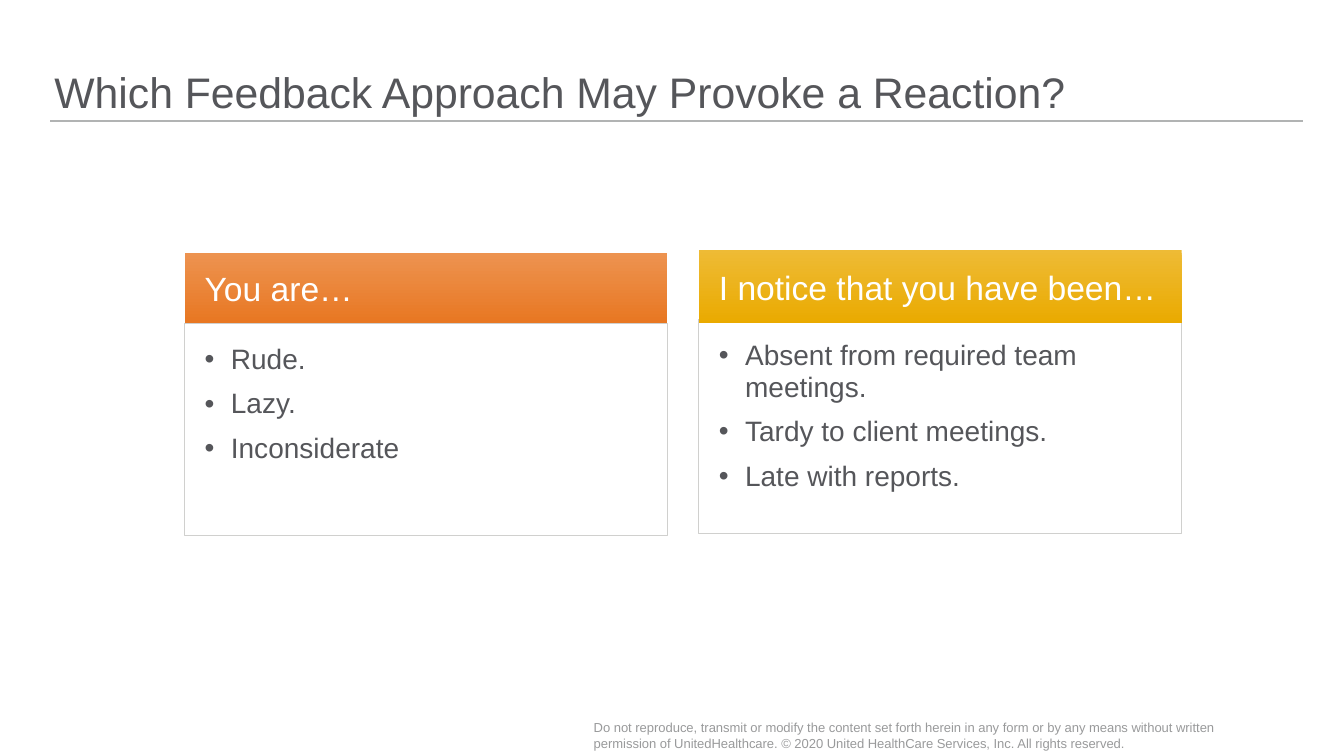
from lxml import etree
from pptx import Presentation
from pptx.dml.color import RGBColor as RGB
from pptx.enum.shapes import MSO_CONNECTOR as LINE, MSO_SHAPE as SHAPE
from pptx.enum.text import MSO_ANCHOR as ANCHOR, PP_ALIGN as ALIGN
from pptx.oxml.ns import qn
from pptx.util import Inches, Pt

# Colours
GRAY = RGB(0x55, 0x56, 0x5A)
PALE = RGB(0x99, 0x9A, 0x9B)
RULE = RGB(0xB1, 0xB3, 0xB3)
EDGE = RGB(0xD0, 0xD0, 0xCE)
WHITE = RGB(0xFF, 0xFF, 0xFF)
ORANGE = RGB(0xED, 0x93, 0x50), RGB(0xE8, 0x77, 0x22)
GOLD = RGB(0xEE, 0xBB, 0x35), RGB(0xEA, 0xAA, 0x00)

# Content
TITLE = "Which Feedback Approach May Provoke a Reaction?"
PANELS = [
    dict(head="You are…", top=2.51, split=3.21, body=3.21, end=5.31,
         fade=ORANGE, items=["Rude.", "Lazy.", "Inconsiderate"]),
    dict(head="I notice that you have been…", top=2.48, split=3.21, body=3.17,
         end=5.29, fade=GOLD,
         items=["Absent from required team meetings.",
                "Tardy to client meetings.", "Late with reports."]),
]
NOTICE = ("Do not reproduce, transmit or modify the content set forth herein in "
          "any form or by any means without written permission of "
          "UnitedHealthcare. © 2020 United HealthCare Services, Inc. "
          "All rights reserved.")

# Layout in inches
LEFT, WIDTH, STEP = 1.83, 4.79, 5.1
INDENT = 0.26

deck = Presentation()
deck.slide_width, deck.slide_height = Inches(13.33), Inches(7.5)
slide = deck.slides.add_slide(deck.slide_layouts[6])
shapes = slide.shapes


def write(shape, lines, size, color, inset=(0.1, 0.05, 0.1, 0.05),
          anchor=ANCHOR.TOP, wrap=True, space=None, bullet=False):
    frame = shape.text_frame
    frame.word_wrap = wrap
    frame.vertical_anchor = anchor
    (frame.margin_left, frame.margin_top,
     frame.margin_right, frame.margin_bottom) = map(Inches, inset)
    for i, line in enumerate(lines):
        para = frame.paragraphs[0] if i == 0 else frame.add_paragraph()
        para.alignment = ALIGN.LEFT
        if space:
            para.line_spacing = space
        if bullet:
            para.space_before = Pt(6 if i else 0)
            para.space_after = Pt(3)
            props = para._p.get_or_add_pPr()
            props.set("marL", str(Inches(INDENT)))
            props.set("indent", str(-Inches(INDENT)))
            font = etree.SubElement(props, qn("a:buFont"))
            font.set("typeface", "Arial")
            etree.SubElement(props, qn("a:buChar")).set("char", "•")
        run = para.add_run()
        run.text = line
        run.font.name, run.font.size = "Arial", Pt(size)
        run.font.color.rgb = color


def box(left, top, width, height):
    shape = shapes.add_shape(SHAPE.RECTANGLE, Inches(left), Inches(top),
                             Inches(width), Inches(height))
    shape.shadow.inherit = False
    return shape


def label(left, top, width, height):
    return shapes.add_textbox(Inches(left), Inches(top),
                              Inches(width), Inches(height))


# Title and rule
rule = shapes.add_connector(LINE.STRAIGHT, Inches(0.5), Inches(1.2),
                            Inches(12.92), Inches(1.2))
rule.line.color.rgb, rule.line.width = RULE, Pt(1)
etree.SubElement(rule._element.spPr, qn("a:effectLst"))
write(label(0.54, 0, 12.38, 1.17), [TITLE], 30.5, GRAY, inset=(0, 0, 0, 0),
      anchor=ANCHOR.BOTTOM, space=0.9)

# Panels: outlined list under a shaded heading
for i, panel in enumerate(PANELS):
    left = LEFT + i * STEP
    body = box(left, panel["body"], WIDTH, panel["end"] - panel["body"])
    body.fill.background()
    body.line.color.rgb, body.line.width = EDGE, Pt(0.5)
    write(body, panel["items"], 20, GRAY, inset=(0.2, 0.2, 0.2, 0.05),
          space=0.95, bullet=True)

    head = box(left, panel["top"], WIDTH, panel["split"] - panel["top"])
    head.line.fill.background()
    head.fill.gradient()
    head.fill.gradient_angle = 270
    for stop, color in zip(head.fill.gradient_stops, panel["fade"]):
        stop.color.rgb = color
    write(head, [panel["head"]], 24, WHITE, inset=(0.2, 0.05, 0.1, 0.05),
          anchor=ANCHOR.MIDDLE, wrap=False)

# Notice
write(label(5.79, 7.09, 6.48, 0.4), [NOTICE], 9.3, PALE)

deck.save("out.pptx")
